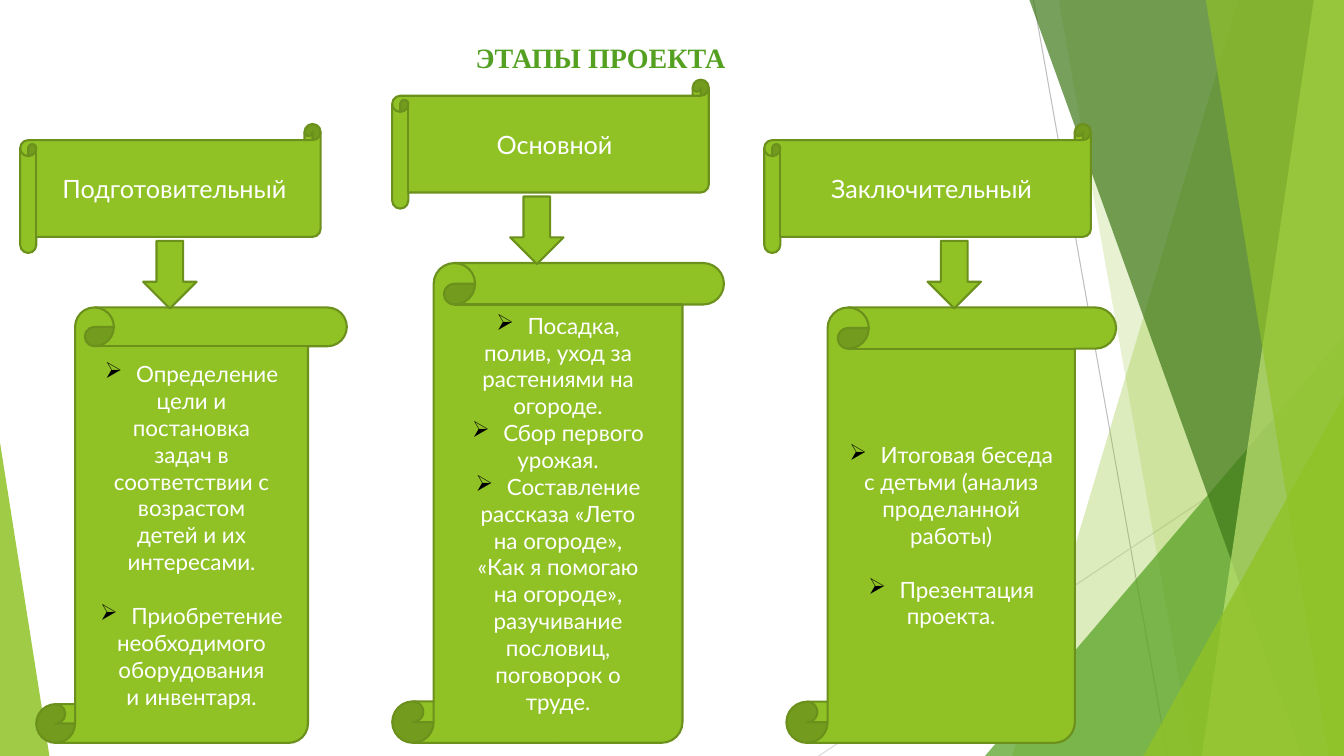
from dataclasses import dataclass

from lxml import etree
from pptx import Presentation
from pptx.dml.color import RGBColor
from pptx.enum.shapes import MSO_CONNECTOR, MSO_SHAPE
from pptx.enum.text import MSO_ANCHOR, MSO_AUTO_SIZE, PP_ALIGN
from pptx.oxml.ns import qn
from pptx.util import Pt

STRAIGHT = MSO_CONNECTOR.STRAIGHT
TRIANGLE = MSO_SHAPE.ISOSCELES_TRIANGLE
BANNER = MSO_SHAPE.HORIZONTAL_SCROLL
SCROLL = MSO_SHAPE.VERTICAL_SCROLL
ARROW = MSO_SHAPE.DOWN_ARROW
MIDDLE = MSO_ANCHOR.MIDDLE
GROW = MSO_AUTO_SIZE.SHAPE_TO_FIT_TEXT
CENTER = PP_ALIGN.CENTER

EMU_PER_PX = 9144
SLIDE_W, SLIDE_H = 1333, 750


@dataclass(frozen=True)
class Theme:
    lime: str = "90C226"
    lime_edge: str = "6B901C"
    pale_lime: str = "C0E474"
    green: str = "54A021"
    dark_green: str = "3F7819"
    white: str = "FFFFFF"
    bullet: str = "000000"
    ray_dark: str = "BFBFBF"
    ray_light: str = "D9D9D9"
    title_font: str = "Times New Roman"
    body_font: str = "Lato"
    title_size: int = 20
    stage_size: int = 18
    task_size: int = 16
    outline: float = 1.5
    ray_width: float = 0.75


THEME = Theme()
TITLE_FORMAT = {"name": THEME.title_font, "size": Pt(THEME.title_size), "bold": True}
STAGE_FORMAT = {"name": THEME.body_font, "size": Pt(THEME.stage_size)}
TASK_FORMAT = {"name": THEME.body_font, "size": Pt(THEME.task_size)}

RAYS = [
    ((1025, 0), (1158, 750), THEME.ray_dark),
    ((1333, 403), (812, 750), THEME.ray_light),
]
BACK_BANDS = [(1228, 1004, THEME.lime, 30), (1050, 1183, THEME.lime, 20)]
FRONT_BANDS = [
    (1021, 1291, THEME.dark_green, 70),
    (1303, 1192, THEME.pale_lime, 70),
    (1196, 1318, THEME.lime, 65),
]
BACK_PEAK = ((977, 333, 356, 417), 1, THEME.green, 72)
FRONT_PEAKS = [
    ((1134, 393, 199, 357), 1, THEME.lime, 80),
    ((0, 439, 49, 311), 0, THEME.lime, 85),
]

BANNER_H, ARROW_W, ARROW_H = 128, 53, 67
ARROW_DROP, SCROLL_DROP, SCROLL_BOTTOM = 116, 182, 737

STAGES = [
    {
        "name": "Подготовительный", "top": 123, "banner": (20, 298),
        "scroll": (36, 308), "arrow": 142, "gap": 19.2,
        "tasks": [
            ["Определение", "цели и", "постановка", "задач в", "соответствии с",
             "возрастом", "детей и их", "интересами."],
            ["Приобретение", "необходимого", "оборудования", "и инвентаря."],
        ],
    },
    {
        "name": "Основной", "top": 79, "banner": (389, 314),
        "scroll": (389, 329), "arrow": 506, "gap": 0,
        "tasks": [
            ["Посадка,", "полив, уход за", "растениями на", "огороде."],
            ["Сбор первого", "урожая."],
            ["Составление", "рассказа «Лето", "на огороде»,", "«Как я помогаю",
             "на огороде»,", "разучивание", "пословиц,", "поговорок о", "труде."],
        ],
    },
    {
        "name": "Заключительный", "top": 123, "banner": (758, 324),
        "scroll": (780, 327), "arrow": 920, "gap": 19.2,
        "tasks": [
            ["Итоговая беседа", "с детьми (анализ", "проделанной", "работы)"],
            ["Презентация", "проекта."],
        ],
    },
]


def px(*lengths):
    return [length * EMU_PER_PX for length in lengths]


def rgb(color):
    return RGBColor.from_string(color)


def format_font(font, values, color):
    for key, value in values.items():
        setattr(font, key, value)
    font.color.rgb = rgb(color)


def fill_translucent(facet, color, opacity):
    facet.shadow.inherit = False
    facet.fill.solid()
    facet.fill.fore_color.rgb = rgb(color)
    facet.line.fill.background()
    tint = facet.fill._xPr.find(qn("a:solidFill"))[0]
    etree.SubElement(tint, qn("a:alpha"), val=str(opacity * 1000))


def add_ray(slide, start, end, color):
    ray = slide.shapes.add_connector(STRAIGHT, *px(*start, *end))
    ray.line.color.rgb = rgb(color)
    ray.line.width = Pt(THEME.ray_width)
    etree.SubElement(ray._element.spPr, qn("a:effectLst"))


def add_band(slide, top_x, bottom_x, color, opacity):
    outline = slide.shapes.build_freeform(top_x, 0, scale=EMU_PER_PX)
    outline.add_line_segments(
        [(SLIDE_W, 0), (SLIDE_W, SLIDE_H), (bottom_x, SLIDE_H)], close=True
    )
    fill_translucent(outline.convert_to_shape(), color, opacity)


def add_peak(slide, box, apex, color, opacity):
    peak = slide.shapes.add_shape(TRIANGLE, *px(*box))
    peak.adjustments[0] = apex
    fill_translucent(peak, color, opacity)


def add_backdrop(slide):
    for ray in RAYS:
        add_ray(slide, *ray)
    for band in BACK_BANDS:
        add_band(slide, *band)
    add_peak(slide, *BACK_PEAK)
    for band in FRONT_BANDS:
        add_band(slide, *band)
    for peak in FRONT_PEAKS:
        add_peak(slide, *peak)


def add_title(slide, text):
    title = slide.shapes.add_textbox(*px(462, 35, 296, 44))
    title.text_frame.word_wrap = True
    title.text_frame.auto_size = GROW
    paragraph = title.text_frame.paragraphs[0]
    paragraph.text = text
    format_font(paragraph.font, TITLE_FORMAT, THEME.green)


def add_green_shape(slide, kind, *box):
    figure = slide.shapes.add_shape(kind, *px(*box))
    figure.shadow.inherit = False
    figure.fill.solid()
    figure.fill.fore_color.rgb = rgb(THEME.lime)
    figure.line.color.rgb = rgb(THEME.lime_edge)
    figure.line.width = Pt(THEME.outline)
    figure.text_frame.vertical_anchor = MIDDLE
    return figure


def add_bullet(paragraph):
    props = paragraph._p.get_or_add_pPr()
    indent = 31 * EMU_PER_PX
    props.set("marL", str(indent))
    props.set("indent", str(-indent))
    tint = etree.SubElement(props, qn("a:buClr"))
    etree.SubElement(tint, qn("a:srgbClr"), val=THEME.bullet)
    etree.SubElement(props, qn("a:buChar"), char="➢")


def write_line(paragraph, text, values):
    paragraph.text = text
    paragraph.alignment = CENTER
    format_font(paragraph.font, values, THEME.white)


def write_tasks(frame, tasks, gap):
    lines = [(n, k, text) for n, task in enumerate(tasks) for k, text in enumerate(task)]
    for number, position, text in lines:
        first = number == position == 0
        paragraph = frame.paragraphs[0] if first else frame.add_paragraph()
        if position == 0:
            add_bullet(paragraph)
        write_line(paragraph, text, TASK_FORMAT)
        if position == 0 and not first and gap:
            paragraph.space_before = Pt(gap)


def add_stage(slide, stage):
    top = stage["top"]
    left, width = stage["banner"]
    banner = add_green_shape(slide, BANNER, left, top, width, BANNER_H)
    write_line(banner.text_frame.paragraphs[0], stage["name"], STAGE_FORMAT)
    left, width = stage["scroll"]
    scroll_top = top + SCROLL_DROP
    scroll = add_green_shape(
        slide, SCROLL, left, scroll_top, width, SCROLL_BOTTOM - scroll_top
    )
    write_tasks(scroll.text_frame, stage["tasks"], stage["gap"])
    add_green_shape(slide, ARROW, stage["arrow"], top + ARROW_DROP, ARROW_W, ARROW_H)


def main():
    deck = Presentation()
    deck.slide_width, deck.slide_height = px(SLIDE_W, SLIDE_H)
    slide = deck.slides.add_slide(deck.slide_layouts[6])
    add_backdrop(slide)
    add_title(slide, "ЭТАПЫ ПРОЕКТА")
    for stage in STAGES:
        add_stage(slide, stage)
    deck.save("out.pptx")


if __name__ == "__main__":
    main()
